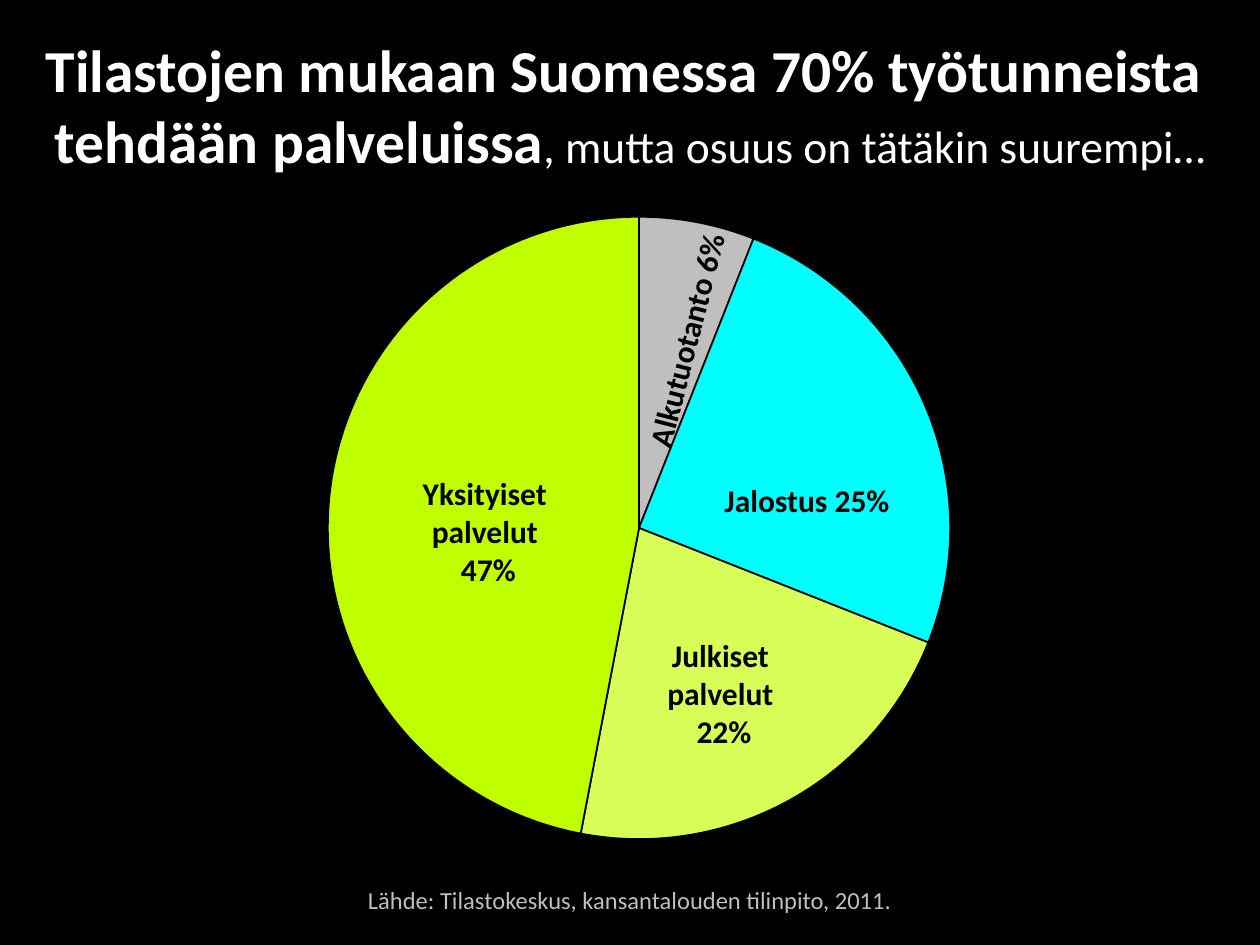
from lxml import etree
from pptx import Presentation, util as u
from pptx.chart.data import CategoryChartData
from pptx.dml.color import RGBColor
from pptx.enum import chart as ch, text as t
from pptx.oxml.ns import qn

PX = 914400 // 126
FONT = "Calibri"
COLORS = {
    "black": "000000",
    "white": "FFFFFF",
    "grey": "BFBFBF",
    "cyan": "00FFFF",
    "light_lime": "D7FF57",
    "lime": "C0FF00",
}
SECTORS = [("1", 6, "grey"), ("2", 25, "cyan"),
           ("3", 22, "light_lime"), ("4", 47, "lime")]
SECTOR_LABELS = [
    (["Julkiset ", "palvelut ", "22%"], (619, 636, 210, 115), 0),
    (["Yksityiset ", "palvelut ", "47%"], (344, 474, 289, 115), 0),
    (["Alkutuotanto 6%"], (517, 321, 338, 38), 284.4),
    (["Jalostus 25%"], (684, 481, 246, 38), 0),
]


def px(*lengths):
    return [u.Emu(length * PX) for length in lengths]


def rgb(name):
    return RGBColor.from_string(COLORS[name])


def add_run(paragraph, words, size, color="black", bold=False):
    run = paragraph.add_run()
    run.text = words
    run.font.name = FONT
    run.font.size = u.Pt(size)
    run.font.bold = bold
    run.font.color.rgb = rgb(color)


def add_text(slide, lines, box, rotation=0, wrap=True,
             align=t.PP_ALIGN.CENTER, **run_format):
    label = slide.shapes.add_textbox(*px(*box))
    label.rotation = rotation
    frame = label.text_frame
    frame.word_wrap = wrap
    frame.margin_left = frame.margin_right = 0
    frame.margin_top = frame.margin_bottom = 0
    for index, line in enumerate(lines):
        paragraph = frame.add_paragraph() if index else frame.paragraphs[0]
        paragraph.alignment = align
        add_run(paragraph, line, **run_format)


def fill_title(slide):
    title = slide.shapes.title
    title.left, title.top, title.width, title.height = px(20, 25, 1221, 158)
    frame = title.text_frame
    frame.word_wrap = False
    frame.auto_size = t.MSO_AUTO_SIZE.NONE
    frame.vertical_anchor = t.MSO_ANCHOR.MIDDLE
    claim, contrast = frame.paragraphs[0], frame.add_paragraph()
    claim.alignment = contrast.alignment = t.PP_ALIGN.CENTER
    add_run(claim, "Tilastojen mukaan Suomessa 70% työtunneista ",
            34, "white", True)
    add_run(contrast, "tehdään palveluissa", 34, "white", True)
    add_run(contrast, ", mutta osuus on tätäkin suurempi…", 26, "white")


def set_plot_area(chart, x, y, w, h):
    """Fix the inner plot area, in fractions of the chart."""
    plot_area = chart.plots[0]._element.getparent()
    for old in plot_area.findall(qn("c:layout")):
        plot_area.remove(old)
    layout = etree.Element(qn("c:layout"))
    manual = etree.SubElement(layout, qn("c:manualLayout"))
    settings = [("layoutTarget", "inner"), ("xMode", "edge"),
                ("yMode", "edge"), ("x", x), ("y", y), ("w", w), ("h", h)]
    for tag, value in settings:
        etree.SubElement(manual, qn(f"c:{tag}")).set("val", str(value))
    plot_area.insert(0, layout)


def add_hours_pie(slide):
    hours = CategoryChartData()
    hours.categories = [category for category, _, _ in SECTORS]
    hours.add_series("Series 1", [share for _, share, _ in SECTORS])
    chart = slide.shapes.add_chart(
        ch.XL_CHART_TYPE.PIE, *px(131, 210, 1129, 684), hours).chart
    chart.has_title = False
    chart.has_legend = False
    chart.font.name = "Arial"
    chart.font.size = u.Pt(16)
    chart.font.color.rgb = rgb("black")
    chart.plots[0].vary_by_categories = True
    set_plot_area(chart, 0.03, 0.01, 0.84, 0.91)
    for index, (_, _, color) in enumerate(SECTORS):
        sector = chart.plots[0].series[0].points[index].format
        sector.fill.solid()
        sector.fill.fore_color.rgb = rgb(color)
        sector.line.color.rgb = rgb("black")
        sector.line.width = u.Pt(1)


def main():
    deck = Presentation()
    deck.slide_width, deck.slide_height = px(1260, 945)
    slide = deck.slides.add_slide(deck.slide_layouts[5])
    slide.background.fill.solid()
    slide.background.fill.fore_color.rgb = rgb("black")

    fill_title(slide)
    add_hours_pie(slide)
    for lines, box, rotation in SECTOR_LABELS:
        add_text(slide, lines, box, rotation, size=18, bold=True)
    add_text(slide, ["Lähde: Tilastokeskus, kansantalouden tilinpito, 2011."],
             (368, 885, 529, 30), wrap=False, align=t.PP_ALIGN.LEFT,
             size=14, color="grey")
    deck.save("out.pptx")


if __name__ == "__main__":
    main()
